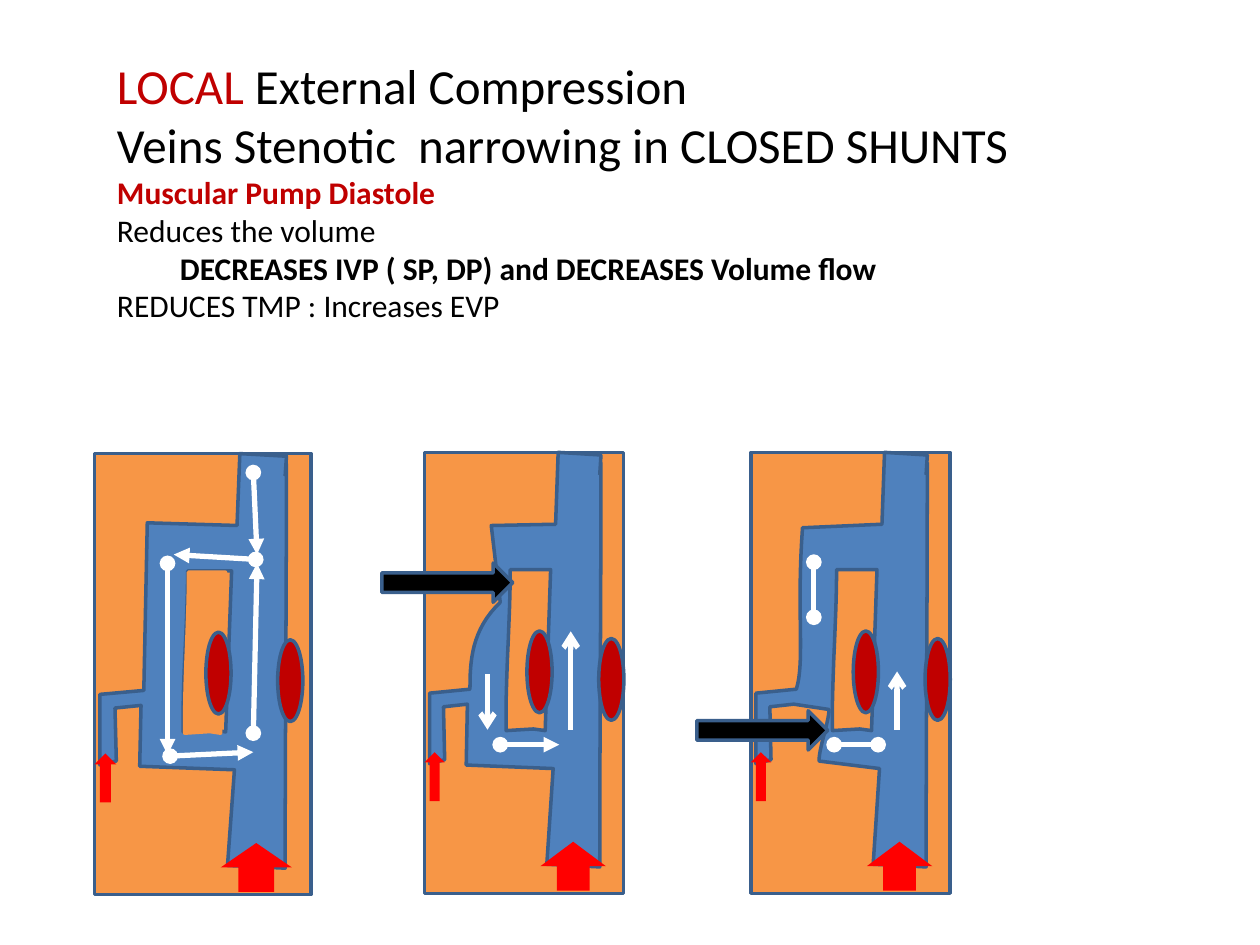
from collections import namedtuple

from lxml.etree import SubElement
from pptx import Presentation
from pptx.dml.color import RGBColor
from pptx.enum.shapes import MSO_CONNECTOR as Connector, MSO_SHAPE as Preset
from pptx.enum.text import MSO_AUTO_SIZE as AutoSize
from pptx.oxml.ns import qn
from pptx.util import Inches, Pt

ORANGE = RGBColor(0xF7, 0x96, 0x46)
BLUE = RGBColor(0x4F, 0x81, 0xBD)
OUTLINE = RGBColor(0x3A, 0x5F, 0x8C)
RED = RGBColor(0xFF, 0x00, 0x00)
DARK_RED = RGBColor(0xC0, 0x00, 0x00)
BLACK = RGBColor(0x00, 0x00, 0x00)
WHITE = RGBColor(0xFF, 0xFF, 0xFF)

Panel = namedtuple("Panel", "box branch_foot branch_top compression flows")


class Box(namedtuple("Box", "left top width height")):
    def point(self, x, y):
        return (Inches(self.left + self.width * x / 100),
                Inches(self.top + self.height * y / 100))

    def inset(self, x, y, width, height):
        return Box(self.left + self.width * x / 100, self.top + self.height * y / 100,
                   self.width * width / 100, self.height * height / 100)


TITLE_BOX = Box(0.83, 0.39, 8.15, 2.26)
TITLE_LINES = [
    (28, [("LOCAL", DARK_RED, False), (" External Compression", BLACK, False)]),
    (28, [("Veins Stenotic  narrowing in CLOSED SHUNTS", BLACK, False)]),
    (18, [("Muscular Pump Diastole", DARK_RED, True)]),
    (18, [("Reduces the volume", BLACK, False)]),
    (18, [("\tDECREASES IVP ( SP, DP) and DECREASES Volume flow", BLACK, True)]),
    (18, [("REDUCES TMP : Increases EVP", BLACK, False)]),
]

TRUNK_RIGHT = [(88.6, 2.3), (88.6, 32.9, 88, 63.4, 88, 94), (61.4, 93.4), (64.6, 71.7)]
SIDE_VEIN = [(21.5, 57.1), (9.5, 57.7), (10.1, 69.7), (2.5, 70.6), (2.5, 54.6), (22.8, 53.7)]
TRUNK_TOP = [(65.8, 16.3), (67.1, 0), (88.6, 0.6), (88, 5.1)]
ISLAND = [(11, 0), (11, 33, 0, 67, 2, 100), (62, 99), (88, 100), (100, 0)]
WIDE_FOOT = [(20.9, 70.9)]

PANELS = [
    Panel(Box(0.75, 3.6, 1.72, 3.5), WIDE_FOOT, [(24.4, 15.7)], None, [
        (73.3, 4.3, 75, 22.9, "oval", "triangle"),
        (73.3, 63.4, 75, 24.9, "oval", "triangle"),
        (74.4, 24, 36.6, 22.9, "oval", "triangle"),
        (33.7, 24.9, 33.7, 68.3, "oval", "triangle"),
        (34.9, 68.6, 73.3, 67.7, "oval", "triangle"),
    ]),
    Panel(Box(3.37, 3.59, 1.58, 3.5), WIDE_FOOT,
          [(22.8, 47.4, 23.4, 40.3, 38, 34), (33.5, 16.6)], (-21.5, 25.1), [
        (73.4, 62.9, 73.4, 40.6, None, "arrow"),
        (31.6, 50.3, 31.6, 62.9, None, "arrow"),
        (38, 66.3, 67.7, 66.3, "oval", "triangle"),
    ]),
    Panel(Box(5.96, 3.59, 1.58, 3.5),
          [(34.2, 70), (34.2, 66.9, 39.2, 61.1, 39.2, 58.3)],
          [(27.2, 47.4, 22.8, 36, 25.9, 17.1)], (-27.2, 58.6), [
        (73.4, 62.9, 73.4, 49.7, None, "arrow"),
        (31.6, 24.9, 31.6, 37.4, "oval", "oval"),
        (41.8, 66.3, 63.9, 66.3, "oval", "oval"),
    ]),
]


def paint(shape, fill, line):
    shape.shadow.inherit = False
    shape.fill.solid()
    shape.fill.fore_color.rgb = fill
    if line is None:
        shape.line.fill.background()
    else:
        shape.line.color.rgb = line
        shape.line.width = Pt(2)


def add_preset(shapes, preset, box, fill, line=OUTLINE):
    shape = shapes.add_shape(preset, *(Inches(length) for length in box))
    paint(shape, fill, line)


def curve_points(start, curve, steps=16):
    x1, y1, x2, y2, x3, y3 = curve
    for step in range(1, steps + 1):
        t = step / steps
        weights = (1 - t) ** 3, 3 * t * (1 - t) ** 2, 3 * t * t * (1 - t), t ** 3
        yield tuple(sum(weight * value for weight, value in zip(weights, values))
                    for values in ((start[0], x1, x2, x3), (start[1], y1, y2, y3)))


def add_outline(shapes, box, segments, fill, line=OUTLINE, close=False):
    points = [segments[0]]
    for segment in segments[1:]:
        points += [segment] if len(segment) == 2 else curve_points(points[-1], segment)
    builder = shapes.build_freeform(*box.point(*points[0]))
    builder.add_line_segments([box.point(*point) for point in points[1:]], close=close)
    paint(builder.convert_to_shape(), fill, line)


def add_flow(shapes, box, flow):
    x1, y1, x2, y2, head, tail = flow
    connector = shapes.add_connector(Connector.STRAIGHT, *box.point(x1, y1), *box.point(x2, y2))
    connector.line.color.rgb = WHITE
    connector.line.width = Pt(3)
    properties = connector.element.spPr
    line = properties.find(qn("a:ln"))
    for tag, end in (("a:headEnd", head), ("a:tailEnd", tail)):
        if end:
            SubElement(line, qn(tag)).set("type", end)
    SubElement(properties, qn("a:effectLst"))


def add_title(slide, box):
    text_box = slide.shapes.add_textbox(*(Inches(length) for length in box))
    text_frame = text_box.text_frame
    text_frame.word_wrap = True
    text_frame.auto_size = AutoSize.SHAPE_TO_FIT_TEXT
    for index, (size, runs) in enumerate(TITLE_LINES):
        paragraph = text_frame.add_paragraph() if index else text_frame.paragraphs[0]
        for text, color, bold in runs:
            run = paragraph.add_run()
            run.text = text
            run.font.name = "Calibri"
            run.font.size = Pt(size)
            run.font.bold = bold
            run.font.color.rgb = color


def add_panel(slide, panel):
    box = panel.box
    shapes = slide.shapes.add_group_shape().shapes
    add_preset(shapes, Preset.RECTANGLE, box, ORANGE)
    vein = TRUNK_RIGHT + panel.branch_foot + SIDE_VEIN + panel.branch_top + TRUNK_TOP
    add_outline(shapes, box, vein, BLUE)
    add_outline(shapes, box.inset(40.5, 26.6, 22.8, 36.5), ISLAND, ORANGE, close=True)
    add_preset(shapes, Preset.UP_ARROW, box.inset(0, 68, 10.1, 11.1), RED, None)
    add_preset(shapes, Preset.UP_ARROW, box.inset(58.2, 88.3, 32.9, 11.1), RED, None)
    if panel.compression:
        arrow_box = box.inset(*panel.compression, 65.8, 8.9)
        add_preset(shapes, Preset.RIGHT_ARROW, arrow_box, BLACK)
    else:
        cover_box = box.inset(41.3, 26.9, 19.2, 36.5)
        add_outline(shapes, cover_box, ISLAND, ORANGE, ORANGE, close=True)
    for flow in panel.flows:
        add_flow(shapes, box, flow)
    muscle = box.inset(51.4, 40.5, 0, 0)._replace(width=0.2, height=0.65)
    add_preset(shapes, Preset.OVAL, muscle, DARK_RED)
    opposite = muscle._replace(left=muscle.left + 0.57, top=muscle.top + 0.06)
    add_preset(shapes, Preset.OVAL, opposite, DARK_RED)


def main():
    presentation = Presentation()
    presentation.slide_width = Inches(10)
    presentation.slide_height = Inches(7.5)
    slide = presentation.slides.add_slide(presentation.slide_layouts[6])
    add_title(slide, TITLE_BOX)
    for panel in PANELS:
        add_panel(slide, panel)
    presentation.save("out.pptx")


if __name__ == "__main__":
    main()
